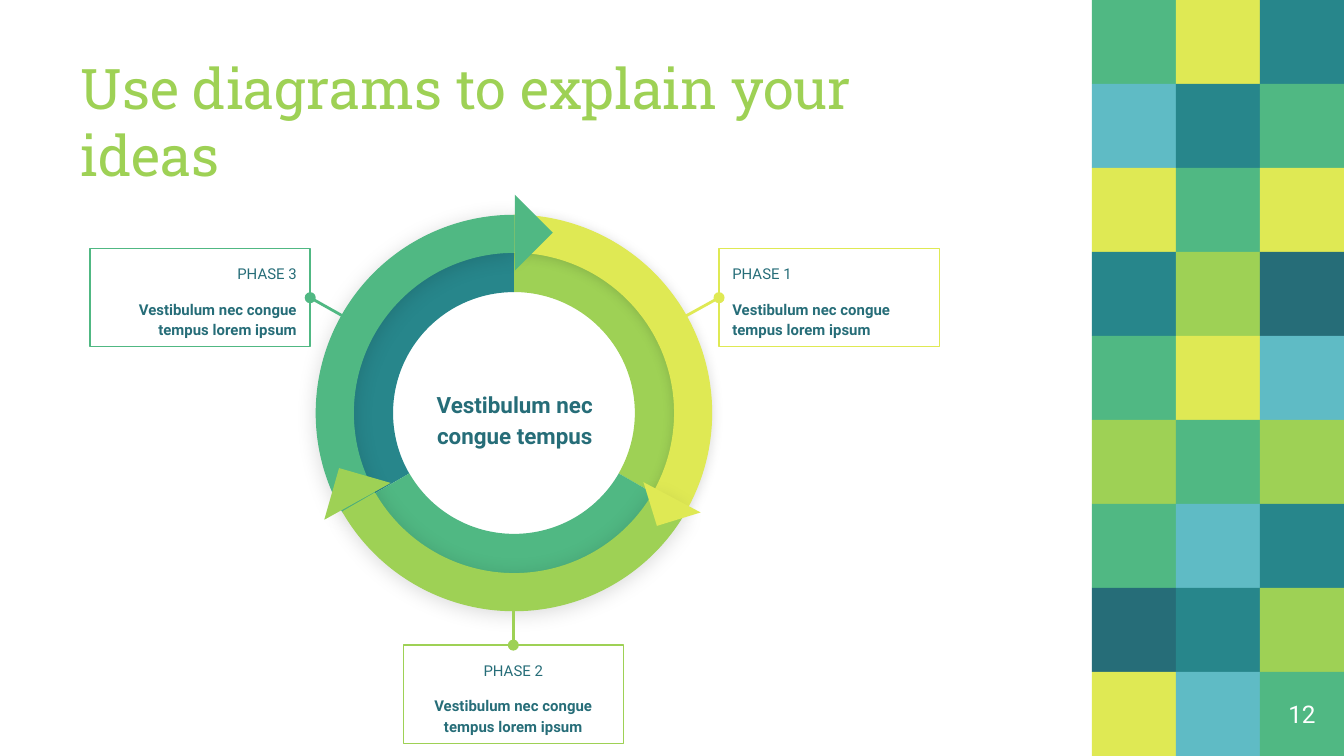
from dataclasses import dataclass

from lxml import etree
from pptx import Presentation
from pptx.dml.color import RGBColor
from pptx.enum import shapes, text
from pptx.oxml.ns import qn
from pptx.util import Pt


@dataclass(frozen=True)
class Theme:
    lime: str = "9ED155"
    yellow: str = "DFE954"
    green: str = "50B883"
    teal: str = "27868B"
    deep: str = "266D78"
    sky: str = "5FBBC5"
    white: str = "FFFFFF"
    heading_font: str = "Roboto Slab"
    body_font: str = "Roboto"
    title_size: float = 30
    number_size: float = 13
    hub_size: float = 12
    phase_size: float = 8


@dataclass(frozen=True)
class Box:
    left: float
    top: float
    width: float
    height: float

    def lengths(self) -> tuple:
        return Pt(self.left), Pt(self.top), Pt(self.width), Pt(self.height)


@dataclass(frozen=True)
class Arc:
    rotation: float
    thickness: float
    color: str
    blur: float = 0  # points; 0 means no shadow
    drop: float = 0


@dataclass(frozen=True)
class Arrowhead:
    box: Box
    rotation: float
    color: str


@dataclass(frozen=True)
class Phase:
    name: str
    left: float
    top: float
    color: str
    align: text.PP_ALIGN
    side: int  # connection site of the card
    ring_point: tuple[float, float]


THEME = Theme()
ALIGN = text.PP_ALIGN
SHAPE = shapes.MSO_SHAPE
INSET = 7.2
TILE = 45
MOSAIC_LEFT = 585
TILE_COLORS = {"G": THEME.green, "Y": THEME.yellow, "T": THEME.teal,
               "B": THEME.sky, "L": THEME.lime, "D": THEME.deep}
MOSAIC = ("GYT", "BTG", "YGY", "TLD", "GYB", "LGL", "GBT", "DTL", "YBG")

RING = Box(169.5, 115.4, 211.7, 211.7)
INNER, OUTER = 0.194, 0.093
RIGHT, BOTTOM, LEFT = 30, 150, 270
ARCS = (
    Arc(RIGHT, INNER, THEME.lime),
    Arc(RIGHT, OUTER, THEME.yellow, 6.8, 0.8),
    Arc(LEFT, INNER, THEME.teal),
    Arc(BOTTOM, INNER, THEME.green),
    Arc(LEFT, OUTER, THEME.green, 11.2, 1.5),
    Arc(BOTTOM, OUTER, THEME.lime, 11.2, 1.5),
)
ARROWHEADS = (
    Arrowhead(Box(177.1, 254.2, 28.8, 28.8), 106, THEME.lime),
    Arrowhead(Box(347.8, 254.2, 24.5, 24.5), 342.9, THEME.yellow),
    Arrowhead(Box(261.4, 110.2, 28.8, 28.8), 225, THEME.green),
)
CARD_WIDTH, CARD_HEIGHT = 118, 52.6
PHASE_DETAIL = "Vestibulum nec congue tempus lorem ipsum"
PHASES = (
    Phase("PHASE 3", 48.2, 133.2, THEME.green, ALIGN.RIGHT, 3, (200.2, 178.6)),
    Phase("PHASE 1", 385.2, 133.2, THEME.yellow, ALIGN.LEFT, 1, (350.6, 178.6)),
    Phase("PHASE 2", 216, 345.6, THEME.lime, ALIGN.CENTER, 0, (275, 308.2)),
)


def rgb(color: str) -> RGBColor:
    return RGBColor.from_string(color)


def set_font(paragraph, name: str, size: float, color: str, bold: bool = False) -> None:
    font = paragraph.font
    font.name, font.size, font.bold = name, Pt(size), bold
    font.color.rgb = rgb(color)


def prepare_frame(frame, anchor) -> None:
    frame.word_wrap = True
    frame.auto_size = text.MSO_AUTO_SIZE.NONE
    frame.vertical_anchor = anchor
    frame.margin_left = frame.margin_right = Pt(INSET)
    frame.margin_top = frame.margin_bottom = Pt(INSET)


def add_solid(slide, kind, box: Box, color: str, rotation: float = 0):
    solid = slide.shapes.add_shape(kind, *box.lengths())
    solid.rotation = rotation
    solid.shadow.inherit = False
    solid.fill.solid()
    solid.fill.fore_color.rgb = rgb(color)
    solid.line.fill.background()
    return solid


def add_mosaic(slide) -> None:
    for row, codes in enumerate(MOSAIC):
        for column, code in enumerate(codes):
            tile = Box(MOSAIC_LEFT + column * TILE, row * TILE, TILE, TILE)
            add_solid(slide, SHAPE.RECTANGLE, tile, TILE_COLORS[code])


def add_label(slide, words: str, box: Box, size: float, color: str,
              bold: bool = False, spacing: float = 1.0) -> None:
    frame = slide.shapes.add_textbox(*box.lengths()).text_frame
    prepare_frame(frame, text.MSO_ANCHOR.MIDDLE)
    paragraph = frame.paragraphs[0]
    paragraph.text = words
    paragraph.alignment = ALIGN.CENTER
    paragraph.line_spacing = spacing
    set_font(paragraph, THEME.body_font, size, color, bold)


def add_arc(slide, arc: Arc) -> None:
    """Draw a third of the ring, starting at 240 degrees before rotation."""
    segment = add_solid(slide, SHAPE.BLOCK_ARC, RING, arc.color, arc.rotation)
    for index, value in enumerate((144, 0, arc.thickness)):
        segment.adjustments[index] = value
    if arc.blur:
        segment.line.color.rgb = rgb(arc.color)
        segment.line.width = Pt(0.75)
        effects = segment.element.spPr.find(qn("a:effectLst"))
        shadow = etree.SubElement(
            effects, qn("a:outerShdw"), blurRad=str(Pt(arc.blur)),
            dist=str(Pt(arc.drop)), dir="5400000", algn="bl", rotWithShape="0")
        black = etree.SubElement(shadow, qn("a:srgbClr"), val="000000")
        etree.SubElement(black, qn("a:alpha"), val="15000")


def add_phase(slide, phase: Phase) -> None:
    card_box = Box(phase.left, phase.top, CARD_WIDTH, CARD_HEIGHT)
    card = slide.shapes.add_shape(SHAPE.RECTANGLE, *card_box.lengths())
    card.shadow.inherit = False
    card.fill.background()
    card.line.color.rgb = rgb(phase.color)
    card.line.width = Pt(0.75)
    frame = card.text_frame
    prepare_frame(frame, text.MSO_ANCHOR.TOP)
    heading, detail = frame.paragraphs[0], frame.add_paragraph()
    heading.text, detail.text = phase.name, PHASE_DETAIL
    detail.space_before = Pt(8)
    for paragraph, bold in ((heading, False), (detail, True)):
        paragraph.alignment = phase.align
        paragraph.line_spacing = 1.15
        set_font(paragraph, THEME.body_font, THEME.phase_size, THEME.deep, bold)

    end_x, end_y = (Pt(value) for value in phase.ring_point)
    leader = slide.shapes.add_connector(
        shapes.MSO_CONNECTOR.STRAIGHT, card.left, card.top, end_x, end_y)
    leader.begin_connect(card, phase.side)
    leader.line.color.rgb = rgb(phase.color)
    leader.line.width = Pt(1.5)
    properties = leader.element.spPr
    etree.SubElement(properties.find(qn("a:ln")), qn("a:headEnd"), type="oval")
    etree.SubElement(properties, qn("a:effectLst"))


def add_title(slide, words: str) -> None:
    title = slide.shapes.title
    title.left, title.top, title.width, title.height = Box(36, 40.3, 504.7, 67.7).lengths()
    prepare_frame(title.text_frame, text.MSO_ANCHOR.BOTTOM)
    paragraph = title.text_frame.paragraphs[0]
    paragraph.text = words
    paragraph.alignment = ALIGN.LEFT
    set_font(paragraph, THEME.heading_font, THEME.title_size, THEME.lime)


def main() -> None:
    deck = Presentation()
    deck.slide_width, deck.slide_height = Pt(720), Pt(405)
    slide = deck.slides.add_slide(deck.slide_layouts[5])
    add_mosaic(slide)
    add_title(slide, "Use diagrams to explain your ideas")
    add_label(slide, "12", Box(675, 360, TILE, TILE), THEME.number_size, THEME.white)
    add_label(slide, "Vestibulum nec congue tempus", Box(218.9, 192.2, 113.8, 63.4),
              THEME.hub_size, THEME.deep, bold=True, spacing=1.15)
    for arc in ARCS:
        add_arc(slide, arc)
    for head in ARROWHEADS:
        add_solid(slide, SHAPE.RIGHT_TRIANGLE, head.box, head.color, head.rotation)
    for phase in PHASES:
        add_phase(slide, phase)
    deck.save("out.pptx")


if __name__ == "__main__":
    main()
